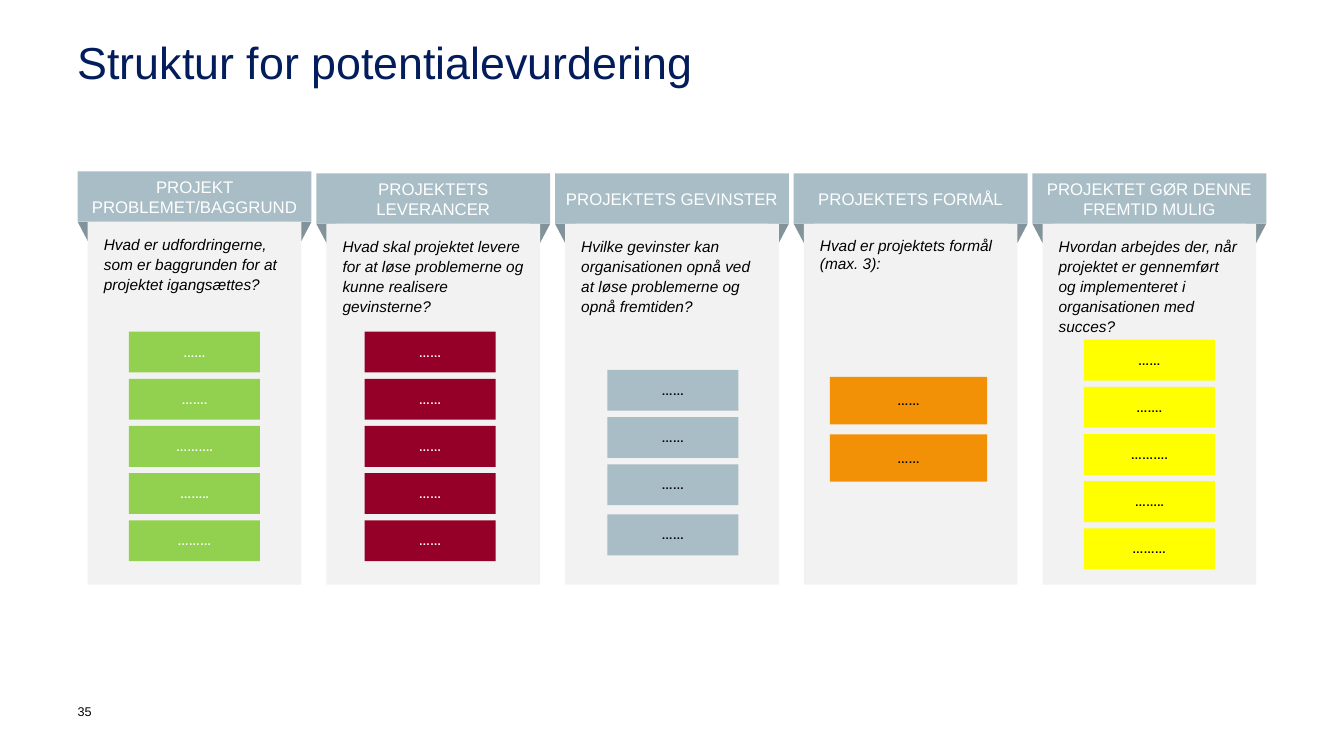
"""Build a slide with five ribbon columns that structure an assessment of project potential."""
from dataclasses import dataclass

from pptx import Presentation
from pptx.dml.color import RGBColor
from pptx.enum.shapes import MSO_SHAPE as Preset
from pptx.enum.text import MSO_ANCHOR as Anchor, PP_ALIGN as Align
from pptx.util import Emu, Inches, Pt

COLORS = {
    "navy": "031D5C", "black": "000000", "white": "FFFFFF", "fold": "83939B",
    "panel": "F2F2F2", "steel": "A8BDC6", "green": "92D050", "wine": "940027",
    "orange": "F29105", "yellow": "FFFF00",
}
CELL = Inches(0.1)
PAGE_COLUMNS, PAGE_ROWS = 133.33, 75
MARGIN = 7.7
RIBBON_WIDTH, RIBBON_STEP = 23.2, 23.68
RIBBON_TOP, RIBBON_HEIGHT = 17.2, 5
FOLD_WIDTH, FOLD_HEIGHT = 2, 1.9
PANEL_BOTTOM = 58


@dataclass(frozen=True)
class Area:
    left: float
    top: float
    width: float
    height: float

    def emu(self) -> list[Emu]:
        return [Emu(round(side * CELL)) for side in (self.left, self.top, self.width, self.height)]


@dataclass(frozen=True)
class Style:
    size: float
    color: str
    bold: bool = False
    italic: bool = False
    align: Align = Align.LEFT
    anchor: Anchor = Anchor.TOP
    spacing: float = 1.0
    insets: tuple[float, float, float, float] = (0, 0, 0, 0)


@dataclass(frozen=True)
class Tiles:
    color: str
    ink: str
    indent: float
    top: float
    labels: tuple[str, ...]
    width: float = 13
    height: float = 4.05
    pitch: float = 4.68
    inset: float = 0.4
    last_drop: float = 0


@dataclass(frozen=True)
class Column:
    heading: str
    question: str
    tiles: Tiles
    lift: float = 0
    spacing: float = 1.08


STAIRS = ("……", "…….", "……….", "……..", "………")
COLUMNS = (
    Column("PROJEKT PROBLEMET/BAGGRUND",
           "Hvad er udfordringerne, som er baggrunden for at projektet igangsættes?",
           Tiles("green", "white", 5.1, 32.9, STAIRS), lift=0.2),
    Column("PROJEKTETS LEVERANCER",
           "Hvad skal projektet levere for at løse problemerne og kunne realisere gevinsterne?",
           Tiles("wine", "white", 4.8, 32.9, ("……",) * 5)),
    Column("PROJEKTETS GEVINSTER",
           "Hvilke gevinster kan organisationen opnå ved at løse problemerne og opnå fremtiden?",
           Tiles("steel", "black", 5.2, 36.7, ("……",) * 4, inset=0, last_drop=0.3)),
    Column("PROJEKTETS FORMÅL",
           "Hvad er projektets formål (max. 3):",
           Tiles("orange", "black", 3.6, 37.4, ("……",) * 2, 15.6, 4.7, 5.7, inset=0),
           spacing=1.0),
    Column("PROJEKTET GØR DENNE FREMTID MULIG",
           "Hvordan arbejdes der, når projektet er gennemført og implementeret "
           "i organisationen med succes?",
           Tiles("yellow", "black", 5.1, 33.7, STAIRS)),
)


def color(name: str) -> RGBColor:
    return RGBColor.from_string(COLORS[name])


def write(box, text: str, style: Style) -> None:
    frame = box.text_frame
    frame.word_wrap = True
    frame.vertical_anchor = style.anchor
    frame.margin_left, frame.margin_top, frame.margin_right, frame.margin_bottom = (
        Emu(round(inset * CELL)) for inset in style.insets)
    para = frame.paragraphs[0]
    para.text = text
    para.alignment = style.align
    para.line_spacing = style.spacing
    para.font.name = "Arial"
    para.font.size = Pt(style.size)
    para.font.bold = style.bold
    para.font.italic = style.italic
    para.font.color.rgb = color(style.color)


def add_label(page, area: Area, text: str, style: Style) -> None:
    write(page.shapes.add_textbox(*area.emu()), text, style)


def add_block(page, area: Area, fill: str, preset: Preset = Preset.RECTANGLE):
    block = page.shapes.add_shape(preset, *area.emu())
    block.shadow.inherit = False
    block.fill.solid()
    block.fill.fore_color.rgb = color(fill)
    block.line.fill.background()
    return block


def draw_tiles(page, left: float, tiles: Tiles) -> None:
    style = Style(8, tiles.ink, bold=True, align=Align.CENTER, anchor=Anchor.MIDDLE,
                  spacing=1.08, insets=(0.4, tiles.inset, 0.4, tiles.inset))
    for index, label in enumerate(tiles.labels):
        drop = tiles.last_drop if index == len(tiles.labels) - 1 else 0
        area = Area(left + tiles.indent, tiles.top + index * tiles.pitch + drop,
                    tiles.width, tiles.height)
        write(add_block(page, area, tiles.color), label, style)


def draw_column(page, left: float, column: Column) -> None:
    top = RIBBON_TOP - column.lift
    fold_top = top + RIBBON_HEIGHT
    for fold_left in (left + RIBBON_WIDTH - FOLD_WIDTH, left):
        fold = add_block(page, Area(fold_left, fold_top, FOLD_WIDTH, FOLD_HEIGHT),
                         "fold", Preset.ISOSCELES_TRIANGLE)
        fold.rotation = 180
    panel = add_block(page, Area(left + FOLD_WIDTH / 2, fold_top, RIBBON_WIDTH - FOLD_WIDTH,
                                 PANEL_BOTTOM - fold_top), "panel")
    write(panel, column.question, Style(11, "black", italic=True, spacing=column.spacing,
                                        insets=(1.6, 1.2, 1.6, 0.8)))
    ribbon = add_block(page, Area(left, top, RIBBON_WIDTH, RIBBON_HEIGHT), "steel")
    write(ribbon, column.heading, Style(12, "white", align=Align.CENTER, anchor=Anchor.MIDDLE,
                                        insets=(1, 0.5, 1, 0.5)))
    draw_tiles(page, left, column.tiles)


def main() -> None:
    deck = Presentation()
    deck.slide_width = Emu(round(PAGE_COLUMNS * CELL))
    deck.slide_height = Emu(PAGE_ROWS * CELL)
    page = deck.slides.add_slide(deck.slide_layouts[6])
    add_label(page, Area(MARGIN, 69.8, 3.1, 3.9), "35", Style(9, "black"))
    add_label(page, Area(MARGIN, 4, 118, 10.2), "Struktur for potentialevurdering",
              Style(32, "navy", spacing=0.9))
    for index, column in enumerate(COLUMNS):
        draw_column(page, MARGIN + index * RIBBON_STEP, column)
    deck.save("out.pptx")


if __name__ == "__main__":
    main()
